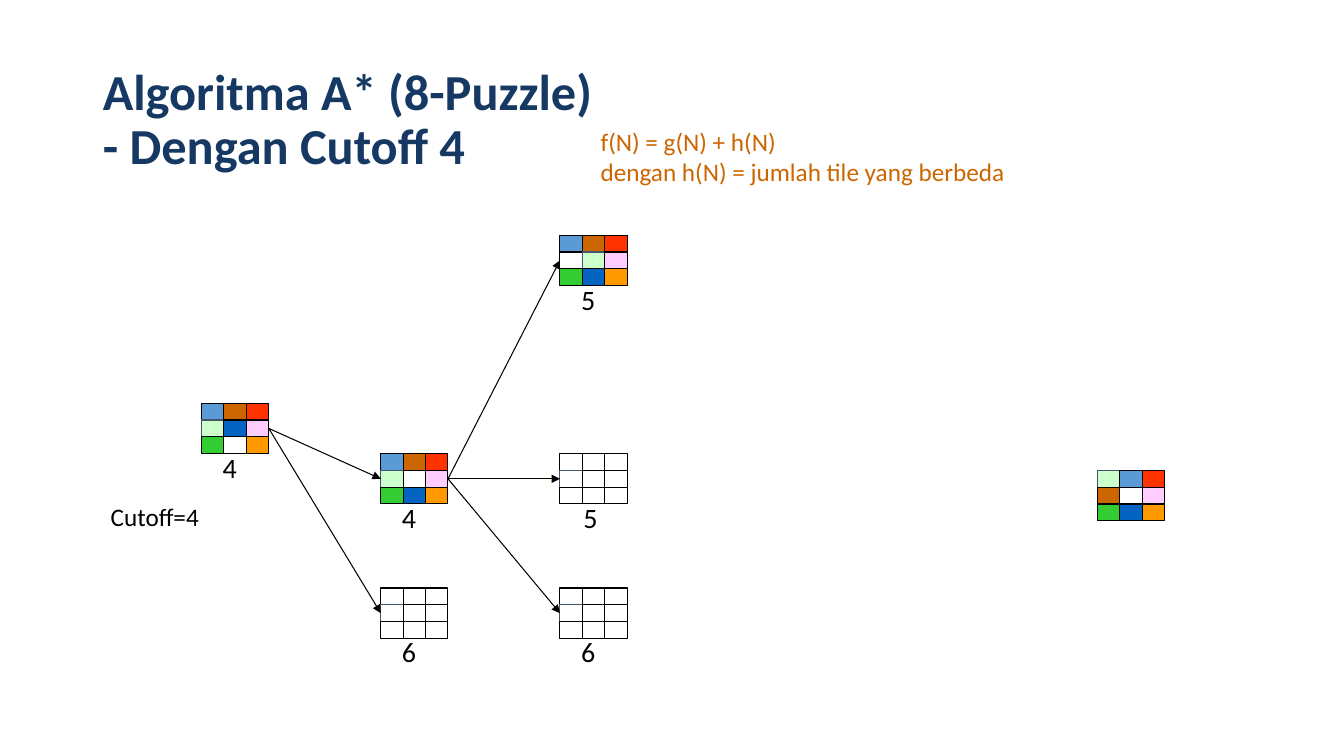
"""Build the A* 8-puzzle search tree slide with cutoff 4."""
import dataclasses
import typing

import pptx
import pptx.dml.color
import pptx.enum.dml
import pptx.enum.shapes
import pptx.enum.text
import pptx.oxml
import pptx.oxml.ns
import pptx.util

COLUMN = pptx.util.Inches(13.33) / 60
ROW = pptx.util.Inches(7.5) / 45
FONT = "Calibri"
BLACK, WHITE, NAVY, ORANGE, SLATE = "000000", "FFFFFF", "163964", "CC6600", "44546A"
TILE_FILLS = {
    "B": "5B9BD5", "O": ORANGE, "R": "FF3300",
    "M": "CCFFCC", "U": "0563C1", "P": "FFCCFF",
    "G": "33CC33", "A": "FF9900", "W": WHITE, "w": WHITE,
}
SLATE_EDGED = "Mw"
UNEXPANDED = "WWW/wWW/WWW"
LEFT_SITE, RIGHT_SITE = 1, 3


class Area(typing.NamedTuple):
    """A rectangle in grid columns and rows."""
    column: float
    row: float
    columns: float
    rows: float

    def box(self) -> tuple[int, int, int, int]:
        """Return left, top, width and height in EMU."""
        return (round(self.column * COLUMN), round(self.row * ROW),
                round(self.columns * COLUMN), round(self.rows * ROW))


@dataclasses.dataclass(frozen=True)
class Board:
    """A puzzle state with its f value and the state it comes from."""
    name: str
    column: float
    row: float
    tiles: str
    cost: str = ""
    parent: str = ""
    cost_shift: float = 0.5


@dataclasses.dataclass(frozen=True)
class Caption:
    """A text with its place, size and colour."""
    words: str
    area: Area
    size: float
    color: str
    bold: bool = False


BOARDS = [
    Board("start", 9, 24, "BOR/MUP/GWA", "4"),
    Board("goal", 49, 28, "MBR/OWP/GUA"),
    Board("up", 17, 27, "BOR/MWP/GUA", "4", "start"),
    Board("start side", 17, 35, UNEXPANDED, "6", "start"),
    Board("up side", 25, 35, UNEXPANDED, "6", "up"),
    Board("up again", 25, 27, UNEXPANDED, "5", "up", 0.6),
    Board("left", 25, 14, "BOR/WMP/GUA", "5", "up"),
]
HEADING = Caption("Algoritma A* (8-Puzzle)\v- Dengan Cutoff 4",
                  Area(4.14, 3.36, 51.75, 7.74), 36, NAVY, True)
REMARKS = [
    Caption("f(N) = g(N) + h(N)\ndengan h(N) = jumlah tile yang berbeda",
            Area(26.37, 7.2, 19.17, 4.26), 18, ORANGE),
    Caption("Cutoff=4", Area(4.5, 29.52, 4.9, 2.4), 18, BLACK),
]


def rgb(code: str) -> pptx.dml.color.RGBColor:
    """Turn a hex string into a colour."""
    return pptx.dml.color.RGBColor.from_string(code)


def write(frame, caption: Caption) -> None:
    """Fill a text frame with a caption and format its runs."""
    frame.text = caption.words
    for paragraph in frame.paragraphs:
        paragraph.alignment = pptx.enum.text.PP_ALIGN.LEFT
        for run in paragraph.runs:
            run.font.name = FONT
            run.font.size = pptx.util.Pt(caption.size)
            run.font.bold = caption.bold
            run.font.color.rgb = rgb(caption.color)


def add_caption(shapes, caption: Caption):
    """Add a free text that does not wrap."""
    remark = shapes.add_textbox(*caption.area.box())
    write(remark.text_frame, caption)
    remark.text_frame.word_wrap = False
    remark.text_frame.auto_size = pptx.enum.text.MSO_AUTO_SIZE.SHAPE_TO_FIT_TEXT
    return remark


def add_heading(slide, caption: Caption) -> None:
    """Place and format the slide title."""
    heading = slide.shapes.title
    heading.left, heading.top, heading.width, heading.height = caption.area.box()
    write(heading.text_frame, caption)
    heading.text_frame.vertical_anchor = pptx.enum.text.MSO_ANCHOR.MIDDLE
    heading.text_frame.auto_size = pptx.enum.text.MSO_AUTO_SIZE.NONE
    heading.text_frame.paragraphs[0].line_spacing = 0.9


def add_tile(shapes, area: Area, kind: str):
    """Add one coloured tile."""
    tile = shapes.add_shape(pptx.enum.shapes.MSO_SHAPE.RECTANGLE, *area.box())
    tile.shadow.inherit = False
    tile.fill.solid()
    tile.fill.fore_color.rgb = rgb(TILE_FILLS[kind])
    tile.line.color.rgb = rgb(SLATE if kind in SLATE_EDGED else BLACK)
    tile.line.width = pptx.util.Pt(0.75)
    return tile


def add_board(slide, board: Board) -> tuple:
    """Draw a board and return its middle-left and middle-right tiles."""
    group = slide.shapes.add_group_shape()
    if board.cost:
        area = Area(board.column + board.cost_shift, board.row + 2.5, 1.53, 2.64)
        cost = add_caption(group.shapes, Caption(board.cost, area, 20, BLACK))
        if board.tiles == UNEXPANDED:
            cost.fill.solid()
            cost.fill.fore_color.rgb = rgb(WHITE)
    tiles = [
        add_tile(group.shapes, Area(board.column + x, board.row + y, 1, 1), kind)
        for y, line in enumerate(board.tiles.split("/"))
        for x, kind in enumerate(line)
    ]
    return tiles[3], tiles[5]


def add_move(slide, source, target) -> None:
    """Draw an arrow from a parent's right edge to a child's left edge."""
    move = slide.shapes.add_connector(
        pptx.enum.shapes.MSO_CONNECTOR.STRAIGHT, 0, 0, 0, 0)
    move.begin_connect(source, RIGHT_SITE)
    move.end_connect(target, LEFT_SITE)
    move.line.color.rgb = rgb(BLACK)
    move.line.width = pptx.util.Pt(0.75)
    namespace = pptx.oxml.ns.nsdecls("a")
    move.line._get_or_add_ln().append(
        pptx.oxml.parse_xml(f'<a:tailEnd {namespace} type="triangle"/>'))
    move._element.spPr.append(pptx.oxml.parse_xml(f"<a:effectLst {namespace}/>"))


def main() -> None:
    """Create the slide and save it."""
    deck = pptx.Presentation()
    deck.slide_width = pptx.util.Inches(13.33)
    deck.slide_height = pptx.util.Inches(7.5)
    slide = deck.slides.add_slide(deck.slide_layouts[5])
    add_heading(slide, HEADING)
    for remark in REMARKS:
        add_caption(slide.shapes, remark)
    edges = {board.name: add_board(slide, board) for board in BOARDS}
    for board in BOARDS:
        if board.parent:
            add_move(slide, edges[board.parent][1], edges[board.name][0])
    deck.save("out.pptx")


if __name__ == "__main__":
    main()
